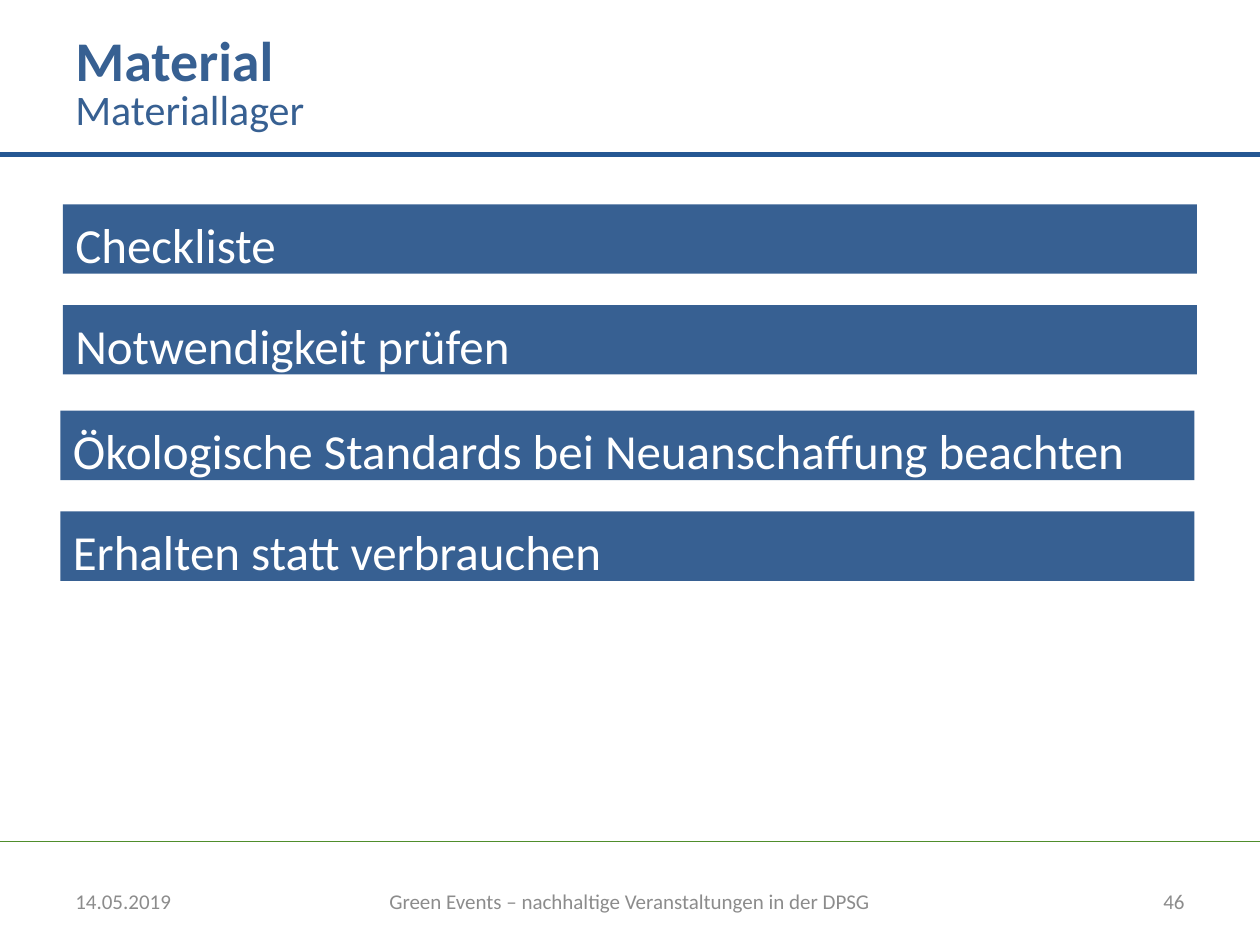
from pptx import Presentation
from pptx.dml.color import RGBColor as Rgb
from pptx.enum.shapes import MSO_CONNECTOR as Conn, MSO_SHAPE as Shape
from pptx.enum.text import MSO_ANCHOR as Anchor, PP_ALIGN as Align
from pptx.oxml.ns import qn
from pptx.util import Cm, Pt
from lxml.etree import SubElement

# Content
HEADS = [  # text, top, height, size, bold
    ("Materiallager", 1.52, 1.19, 24, False),
    ("Material", 0.03, 2.08, 32, True),
]
BARS = [  # text, left, top
    ("Checkliste", 1.27, 4.12),
    ("Notwendigkeit prüfen", 1.27, 6.15),
    ("Ökologische Standards bei Neuanschaffung beachten", 1.22, 8.28),
    ("Erhalten statt verbrauchen", 1.22, 10.31),
]
FOOT = [  # text, left, width, alignment
    ("14.05.2019", 1.27, 5.92, Align.LEFT),
    ("Green Events – nachhaltige Veranstaltungen in der DPSG",
     7.59, 10.21, Align.CENTER),
    ("46", 18.21, 5.92, Align.RIGHT),
]
RULES = [  # top, colour, weight
    (16.97, "4F8D2C", 0.75),
    (3.12, "255793", 3),
]
BLUE, WHITE, GREY = "376092", "FFFFFF", "8C8C8C"
WIDE, LEFT = 25.4, 1.27

deck = Presentation()
deck.slide_width, deck.slide_height = Cm(WIDE), Cm(19.05)
slide = deck.slides.add_slide(deck.slide_layouts[6])
shapes = slide.shapes


def tint(code):
    return Rgb.from_string(code)


def write(text, box, size=12, color=GREY, fill=None, bold=False,
          align=Align.LEFT, drop=0):
    """Put text in a box; drop is the share of the size it sits lower."""
    area = [Cm(part) for part in box]
    if fill:
        item = shapes.add_shape(Shape.RECTANGLE, *area)
        item.shadow.inherit = False
        item.fill.solid()
        item.fill.fore_color.rgb = tint(fill)
        item.line.fill.background()
    else:
        item = shapes.add_textbox(*area)
    frame = item.text_frame
    frame.word_wrap = True
    frame.vertical_anchor = Anchor.MIDDLE
    frame.margin_top, frame.margin_bottom = Pt(size * drop), 0
    para = frame.paragraphs[0]
    para.text, para.alignment = text, align
    font = para.runs[0].font
    font.name, font.size, font.bold = "Calibri", Pt(size), bold
    font.color.rgb = tint(color)


# Rules across the slide
for top, color, weight in RULES:
    rule = shapes.add_connector(Conn.STRAIGHT, 0, Cm(top), Cm(WIDE), Cm(top))
    rule.line.color.rgb = tint(color)
    rule.line.width = Pt(weight)
    SubElement(rule._element.spPr, qn("a:effectLst"))

# Headings
for text, top, high, size, bold in HEADS:
    write(text, (LEFT, top, 16.94, high), size=size, color=BLUE,
          bold=bold, drop=0.2)

# Bars
for text, left, top in BARS:
    write(text, (left, top, 22.86, 1.4), size=28, color=WHITE,
          fill=BLUE, drop=0.2)

# Footer
for text, left, width, align in FOOT:
    write(text, (left, 17.65, width, 1.02), align=align)

deck.save("out.pptx")
